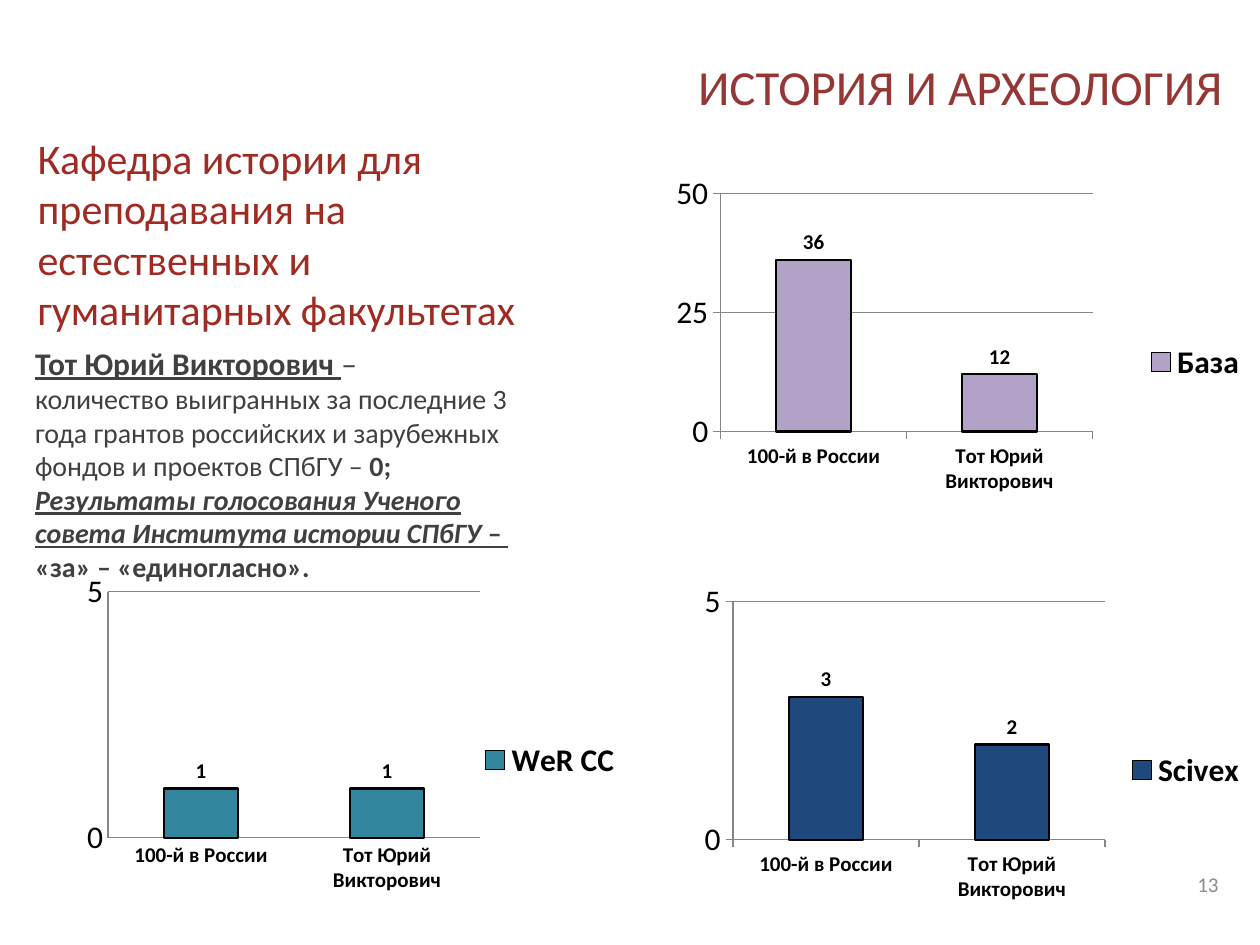
from dataclasses import dataclass

from lxml.etree import SubElement
from pptx import Presentation
from pptx.chart.data import CategoryChartData
from pptx.dml.color import RGBColor
from pptx.enum.chart import XL_CHART_TYPE as ChartType
from pptx.enum.chart import XL_LABEL_POSITION as LabelPosition
from pptx.enum.chart import XL_LEGEND_POSITION as LegendPosition
from pptx.enum.chart import XL_TICK_MARK as TickMark
from pptx.enum.text import MSO_ANCHOR as Anchor
from pptx.enum.text import PP_ALIGN as Align
from pptx.oxml.ns import qn
from pptx.util import Inches, Pt

WIDTH, HEIGHT = Inches(10), Inches(7.5)
FONT = "Calibri"
COLORS = {
    "title": "953735", "heading": "9F2B22", "body": "404040",
    "number": "8C8C8C", "black": "000000", "axis": "868686",
    "violet": "B3A2C7", "teal": "31859C", "navy": "1F497D",
}
CATEGORIES = ["100-й в России", "Тот Юрий Викторович"]


@dataclass
class Area:
    """Place and size in percent of the slide."""
    left: float
    top: float
    width: float
    height: float

    def box(self) -> tuple[int, ...]:
        return (int(WIDTH * self.left / 100), int(HEIGHT * self.top / 100),
                int(WIDTH * self.width / 100), int(HEIGHT * self.height / 100))


@dataclass
class Run:
    text: str
    size: float
    color: str
    bold: bool = False
    italic: bool = False
    underline: bool = False


@dataclass
class IndexChart:
    name: str
    values: tuple[int, int]
    color: str
    left: float
    top: float
    step: int
    maximum: int
    ticks: TickMark
    plot: tuple[float, float, float, float]


def color(name: str) -> RGBColor:
    return RGBColor.from_string(COLORS[name])


def format_font(font, size: float, name: str, bold: bool = False) -> None:
    font.name, font.size, font.bold = FONT, Pt(size), bold
    font.color.rgb = color(name)


def write(text_frame, paragraphs: list[list[Run]], align=Align.LEFT,
          anchor=Anchor.MIDDLE) -> None:
    text_frame.word_wrap = True
    text_frame.vertical_anchor = anchor
    for index, runs in enumerate(paragraphs):
        paragraph = text_frame.add_paragraph() if index else text_frame.paragraphs[0]
        paragraph.alignment = align
        for item in runs:
            run = paragraph.add_run()
            run.text = item.text
            format_font(run.font, item.size, item.color, item.bold)
            run.font.italic, run.font.underline = item.italic, item.underline


def add_text(slide, area: Area, paragraphs: list[list[Run]], **options) -> None:
    write(slide.shapes.add_textbox(*area.box()).text_frame, paragraphs, **options)


def place_plot(chart, shares: tuple[float, ...]) -> None:
    """Fix the inner plot area, in shares of the chart."""
    plot_area = chart._chartSpace.chart.plotArea
    for old in plot_area.findall(qn("c:layout")):
        plot_area.remove(old)
    layout = SubElement(plot_area, qn("c:layout"))
    plot_area.insert(0, layout)
    manual = SubElement(layout, qn("c:manualLayout"))
    settings = [("layoutTarget", "inner"), ("xMode", "edge"), ("yMode", "edge")]
    settings += zip("xywh", shares)
    for tag, value in settings:
        SubElement(manual, qn(f"c:{tag}")).set("val", str(value))


def add_index_chart(slide, item: IndexChart) -> None:
    data = CategoryChartData()
    data.categories = CATEGORIES
    data.add_series(item.name, item.values)
    area = Area(item.left, item.top, 49.2, 42)
    chart = slide.shapes.add_chart(
        ChartType.COLUMN_CLUSTERED, *area.box(), data).chart
    chart.has_title = False
    format_font(chart.font, 18, "black")
    place_plot(chart, item.plot)

    # Legend
    chart.has_legend = True
    chart.legend.position = LegendPosition.RIGHT
    chart.legend.include_in_layout = False
    format_font(chart.legend.font, 18, "black", True)

    # Axes
    for axis in (chart.category_axis, chart.value_axis):
        axis.major_tick_mark = item.ticks
        axis.minor_tick_mark = TickMark.NONE
        axis.format.line.color.rgb = color("axis")
    format_font(chart.category_axis.tick_labels.font, 12, "black", True)
    value_axis = chart.value_axis
    value_axis.minimum_scale, value_axis.maximum_scale = 0, item.maximum
    value_axis.major_unit = item.step
    value_axis.major_gridlines.format.line.color.rgb = color("axis")

    # Columns and their values
    plot = chart.plots[0]
    plot.gap_width, plot.vary_by_categories = 150, False
    series = plot.series[0]
    series.format.fill.solid()
    series.format.fill.fore_color.rgb = color(item.color)
    series.format.line.color.rgb = color("black")
    series.format.line.width = Pt(1.25)
    labels = series.data_labels
    labels.show_value, labels.position = True, LabelPosition.OUTSIDE_END
    format_font(labels.font, 12, "black", True)


CHARTS = [
    IndexChart("Scivex", (3, 2), "navy", 50.8, 60.53, 5, 5,
               TickMark.OUTSIDE, (0.15, 0.075, 0.6, 0.6)),
    IndexChart("WeR CC", (1, 1), "teal", 1.2, 59.47, 5, 5,
               TickMark.NONE, (0.15, 0.075, 0.6, 0.62)),
    IndexChart("База", (36, 12), "violet", 50.8, 17.33, 25, 50,
               TickMark.OUTSIDE, (0.13, 0.075, 0.6, 0.6)),
]
HEADING = "Кафедра истории для преподавания на естественных и гуманитарных факультетах"
GRANTS = ("количество выигранных за последние 3 года грантов российских "
          "и зарубежных фондов и проектов СПбГУ – ")
VOTE = "Результаты голосования Ученого совета Института истории СПбГУ "
DETAILS = [
    [Run("Тот Юрий Викторович ", 18, "body", bold=True, underline=True),
     Run("–", 18, "body")],
    [Run(GRANTS, 16, "body"), Run("0;", 16, "body", bold=True)],
    [Run(VOTE, 16, "body", bold=True, italic=True, underline=True),
     Run("– ", 16, "body", bold=True, underline=True)],
    [Run("«за» – «единогласно».", 16, "body", bold=True)],
]


def main() -> None:
    presentation = Presentation()
    presentation.slide_width, presentation.slide_height = WIDTH, HEIGHT
    slide = presentation.slides.add_slide(presentation.slide_layouts[5])

    # Title
    title = slide.shapes.title
    title.left, title.top, title.width, title.height = Area(25.6, 4, 72.4, 10.27).box()
    write(title.text_frame, [[Run("ИСТОРИЯ И АРХЕОЛОГИЯ", 28, "title")]],
          align=Align.RIGHT)

    # Citation charts
    for item in CHARTS:
        add_index_chart(slide, item)

    # Department, candidate and slide number
    add_text(slide, Area(2, 13.2, 42.5, 22.93), [[Run(HEADING, 24, "heading")]])
    add_text(slide, Area(1.8, 35.73, 42.5, 30.93), DETAILS, anchor=Anchor.TOP)
    add_text(slide, Area(74.4, 90.93, 23.3, 5.33), [[Run("13", 12, "number")]],
             align=Align.RIGHT)

    presentation.save("out.pptx")


if __name__ == "__main__":
    main()
